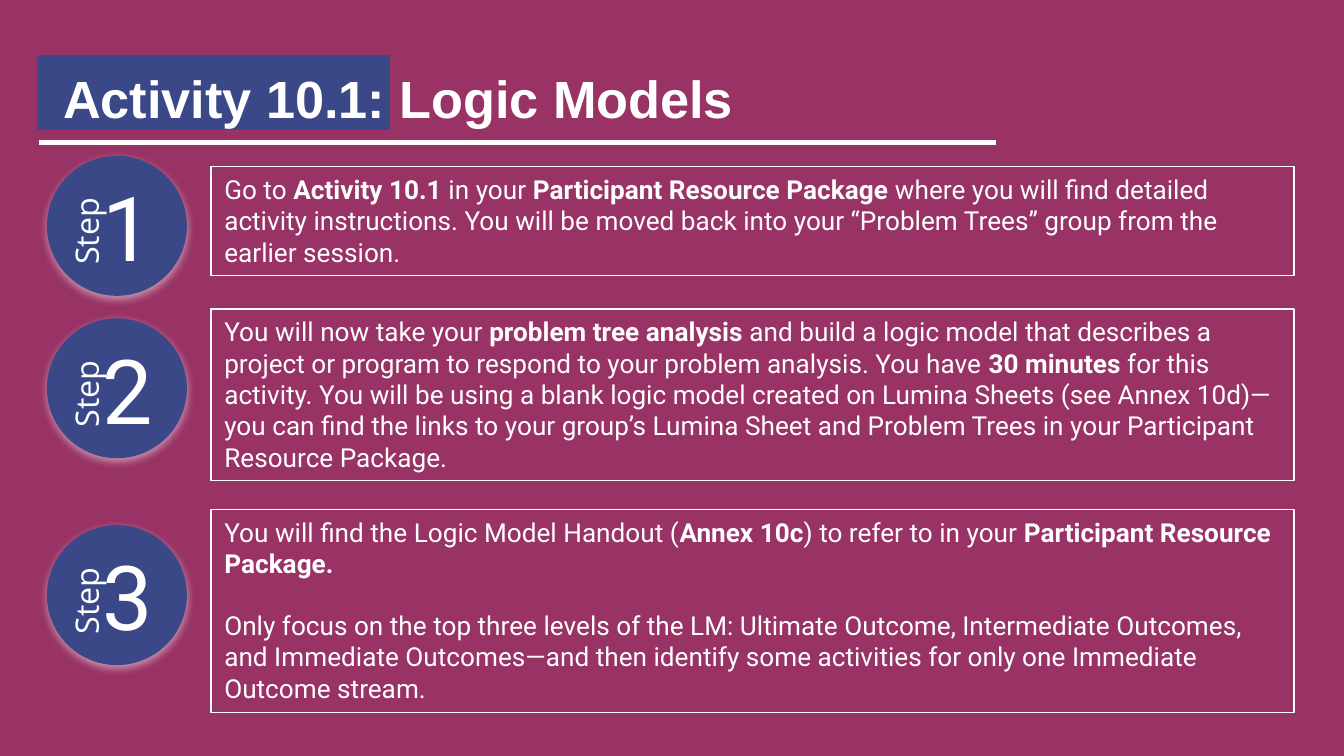
from lxml import etree
from pptx import Presentation
from pptx.dml.color import RGBColor
from pptx.enum.shapes import MSO_CONNECTOR, MSO_SHAPE
from pptx.enum.text import MSO_ANCHOR, MSO_AUTO_SIZE, PP_ALIGN
from pptx.oxml import parse_xml
from pptx.oxml.ns import qn
from pptx.util import Cm, Pt

RECTANGLE, OVAL = MSO_SHAPE.RECTANGLE, MSO_SHAPE.OVAL
STRAIGHT = MSO_CONNECTOR.STRAIGHT
TOP, MIDDLE = MSO_ANCHOR.TOP, MSO_ANCHOR.MIDDLE
LEFT, CENTER = PP_ALIGN.LEFT, PP_ALIGN.CENTER
FIXED, GROW = MSO_AUTO_SIZE.NONE, MSO_AUTO_SIZE.SHAPE_TO_FIT_TEXT

COLORS = {"plum": "993365", "blue": "3A4888", "white": "FFFFFF"}
GLOW = (
    '<a:effectLst xmlns:a="http://schemas.openxmlformats.org/drawingml/2006/main">'
    '<a:outerShdw blurRad="57150" dist="19050" dir="5400000" algn="bl" rotWithShape="0">'
    f'<a:srgbClr val="{COLORS["white"]}"><a:alpha val="48000"/></a:srgbClr>'
    "</a:outerShdw></a:effectLst>"
)

STEPS = [
    {"circle": 3.0, "top": 3.15, "height": 2.06, "paragraphs": [
        ["Go to ", "Activity 10.1 ", "in your ", "Participant Resource Package ",
         "where you will find detailed activity instructions. You will be moved back "
         "into your “Problem Trees” group from the earlier session."],
    ]},
    {"circle": 6.07, "top": 5.84, "height": 3.25, "paragraphs": [
        ["You will now take your ", "problem tree analysis ",
         "and build a logic model that describes a project or program to respond to "
         "your problem analysis. You have ", "30 minutes ",
         "for this activity. You will be using a blank logic model created on Lumina "
         "Sheets (see Annex 10d)—you can find the links to your group’s Lumina Sheet "
         "and Problem Trees in your Participant Resource Package."],
    ]},
    {"circle": 9.98, "top": 9.63, "height": 3.84, "paragraphs": [
        ["You will find the Logic Model Handout (", "Annex 10c",
         ") to refer to in your ", "Participant Resource Package."],
        ["Only focus on the top three levels of the LM: Ultimate Outcome, Intermediate "
         "Outcomes, and Immediate Outcomes—and then identify some activities for only "
         "one Immediate Outcome stream."],
    ]},
]


def style_span(span, font, size, bold=False):
    span.font.name = font
    span.font.size = Pt(size)
    span.font.bold = bold
    span.font.color.rgb = RGBColor.from_string(COLORS["white"])


def style_shape(shape, fill, line, width):
    shape.shadow.inherit = False
    if fill:
        shape.fill.solid()
        shape.fill.fore_color.rgb = RGBColor.from_string(COLORS[fill])
    else:
        shape.fill.background()
    shape.line.color.rgb = RGBColor.from_string(COLORS[line])
    shape.line.width = Pt(width)


deck = Presentation()
deck.slide_width, deck.slide_height = Cm(25.4), Cm(14.29)
page = deck.slides.add_slide(deck.slide_layouts[5])
page.background.fill.solid()
page.background.fill.fore_color.rgb = RGBColor.from_string(COLORS["plum"])

rule = page.shapes.add_connector(STRAIGHT, Cm(0.74), Cm(2.69), Cm(18.82), Cm(2.69))
rule.line.color.rgb = RGBColor.from_string(COLORS["white"])
rule.line.width = Pt(3)
etree.SubElement(rule.element.spPr, qn("a:effectLst"))

highlight = page.shapes.add_shape(RECTANGLE, Cm(0.74), Cm(1.07), Cm(6.6), Cm(1.35))
style_shape(highlight, "blue", "blue", 2)

title = page.shapes.title
title.left, title.top, title.width, title.height = Cm(0.94), Cm(1.12), Cm(23.5), Cm(1.45)
title.text_frame.text = "Activity 10.1: Logic Models"
title.text_frame.auto_size = FIXED
title.text_frame.vertical_anchor = TOP
title.text_frame.paragraphs[0].alignment = LEFT
style_span(title.text_frame.paragraphs[0].runs[0], "Arial", 28, True)
highlight.element.addnext(title.element)

for number, step in enumerate(STEPS, start=1):
    badge = page.shapes.add_group_shape()
    circle = badge.shapes.add_shape(OVAL, Cm(0.94), Cm(step["circle"]), Cm(2.54), Cm(2.54))
    style_shape(circle, "blue", "blue", 3)
    effects = circle.element.spPr.find(qn("a:effectLst"))
    effects.getparent().replace(effects, parse_xml(GLOW))
    frame = circle.text_frame
    frame.margin_left = Cm(0.42)
    frame.margin_top = frame.margin_right = frame.margin_bottom = 0
    frame.vertical_anchor = MIDDLE
    frame.text = str(number)
    frame.paragraphs[0].alignment = CENTER
    style_span(frame.paragraphs[0].runs[0], "Roboto", 48)

    label = badge.shapes.add_textbox(Cm(0.28), Cm(step["circle"] + 0.74), Cm(2.57), Cm(1.27))
    label.rotation = 270
    frame = label.text_frame
    frame.word_wrap = True
    frame.margin_left = frame.margin_top = frame.margin_right = frame.margin_bottom = Cm(0.33)
    frame.text = "Step"
    frame.paragraphs[0].alignment = CENTER
    style_span(frame.paragraphs[0].runs[0], "Open Sans", 17.3)

    box = page.shapes.add_shape(
        RECTANGLE, Cm(3.99), Cm(step["top"]), Cm(20.47), Cm(step["height"]))
    style_shape(box, None, "white", 0.75)
    frame = box.text_frame
    frame.word_wrap = True
    frame.auto_size = GROW
    frame.vertical_anchor = TOP
    for index, pieces in enumerate(step["paragraphs"]):
        para = frame.add_paragraph() if index else frame.paragraphs[0]
        para.alignment = LEFT
        para.space_before = Pt(16.4 if index else 0)
        for position, piece in enumerate(pieces):
            span = para.add_run()
            span.text = piece
            style_span(span, "Roboto", 14, position % 2 == 1)

deck.save("out.pptx")
